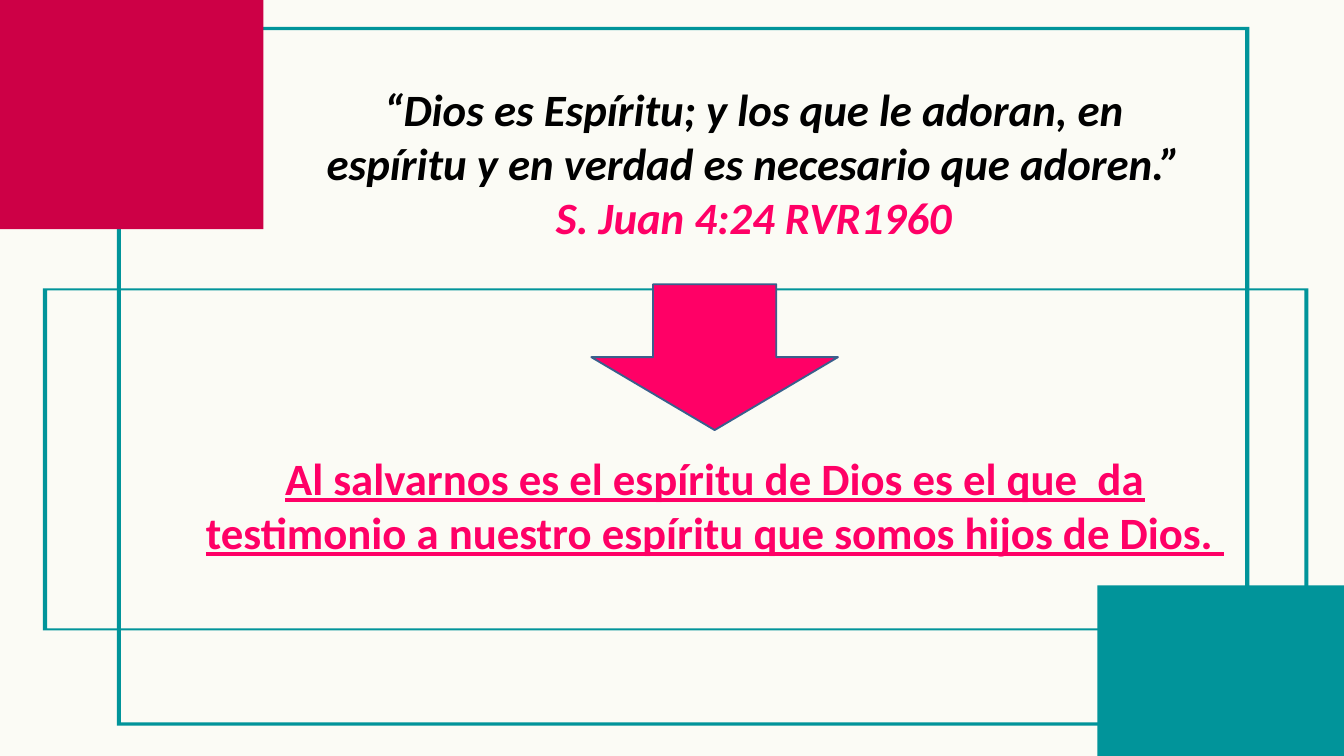
from pptx import Presentation
from pptx.dml.color import RGBColor
from pptx.enum.shapes import MSO_SHAPE
from pptx.enum.text import PP_ALIGN
from pptx.util import Inches, Pt

WIDTH, HEIGHT = 20, 11.25
CREAM = RGBColor(0xFB, 0xFB, 0xF5)
TEAL = RGBColor(0x01, 0x94, 0x9A)
CRIMSON = RGBColor(0xCD, 0x00, 0x46)
PINK = RGBColor(0xFF, 0x00, 0x66)
BLACK = RGBColor(0x00, 0x00, 0x00)
NAVY = RGBColor(0x3A, 0x5F, 0x8C)

VERSE = [
    ("“Dios es Espíritu; y los que le adoran, en espíritu y en verdad es necesario que adoren.”", BLACK),
    ("S. Juan 4:24 RVR1960", PINK),
]
MESSAGE = [
    ("Al salvarnos es el espíritu de Dios es el que  da testimonio a nuestro espíritu que somos hijos de Dios. ", PINK),
]
FRAMES = [
    {"area": (0.64, 4.29, 18.83, 5.09), "side": 0.06, "edge": 0.03},
    {"area": (1.74, 0.4, 16.85, 10.4), "side": 0.06, "edge": 0.05},
]
CORNER_BLOCKS = [
    ((0, 0, 3.92, 3.41), CRIMSON),
    ((WIDTH - 3.67, HEIGHT - 2.54, 3.67, 2.54), TEAL),
]
VERSE_AREA = (4.5, 1.17, 13.44, 2.52)
MESSAGE_AREA = (2.68, 6.66, 15.92, 2.46)
ARROW_AREA = (8.8, 4.23, 3.67, 2.17)


def paint(shape, fill, line=None):
    shape.shadow.inherit = False
    shape.fill.solid()
    shape.fill.fore_color.rgb = fill
    if line is None:
        shape.line.fill.background()
    else:
        shape.line.color.rgb = line
        shape.line.width = Pt(2)


def add_block(page, kind, area, fill, line=None):
    shape = page.shapes.add_shape(kind, *map(Inches, area))
    paint(shape, fill, line)


def add_frame(page, area, side, edge):
    left, top, width, height = area
    right, bottom = left + width, top + height
    outer = [(right, top), (left, top), (left, bottom), (right, bottom)]
    inner = [
        (right - side, bottom - edge), (left + side, bottom - edge),
        (left + side, top + edge), (right - side, top + edge),
    ]
    outer, inner = ([(Inches(x), Inches(y)) for x, y in points] for points in (outer, inner))
    builder = page.shapes.build_freeform(*outer[0])
    builder.add_line_segments(outer[1:], close=True)
    builder.move_to(*inner[0])
    builder.add_line_segments(inner[1:], close=True)
    paint(builder.convert_to_shape(), TEAL)


def add_text(page, area, lines, size=48, italic=False, underline=False):
    box = page.shapes.add_textbox(*map(Inches, area))
    box.text_frame.word_wrap = True
    para = box.text_frame.paragraphs[0]
    para.alignment = PP_ALIGN.CENTER
    for number, (text, color) in enumerate(lines):
        if number:
            para.add_line_break()
        span = para.add_run()
        span.text = text
        span.font.name = "Calibri"
        span.font.size = Pt(size)
        span.font.bold = True
        span.font.italic = italic
        span.font.underline = underline
        span.font.color.rgb = color


def main():
    deck = Presentation()
    deck.slide_width, deck.slide_height = Inches(WIDTH), Inches(HEIGHT)
    page = deck.slides.add_slide(deck.slide_layouts[6])
    page.background.fill.solid()
    page.background.fill.fore_color.rgb = CREAM

    for frame in FRAMES:
        add_frame(page, **frame)
    for area, color in CORNER_BLOCKS:
        add_block(page, MSO_SHAPE.RECTANGLE, area, color)
    add_text(page, VERSE_AREA, VERSE, italic=True)
    add_text(page, MESSAGE_AREA, MESSAGE, underline=True)
    add_block(page, MSO_SHAPE.DOWN_ARROW, ARROW_AREA, PINK, line=NAVY)
    deck.save("out.pptx")


if __name__ == "__main__":
    main()
